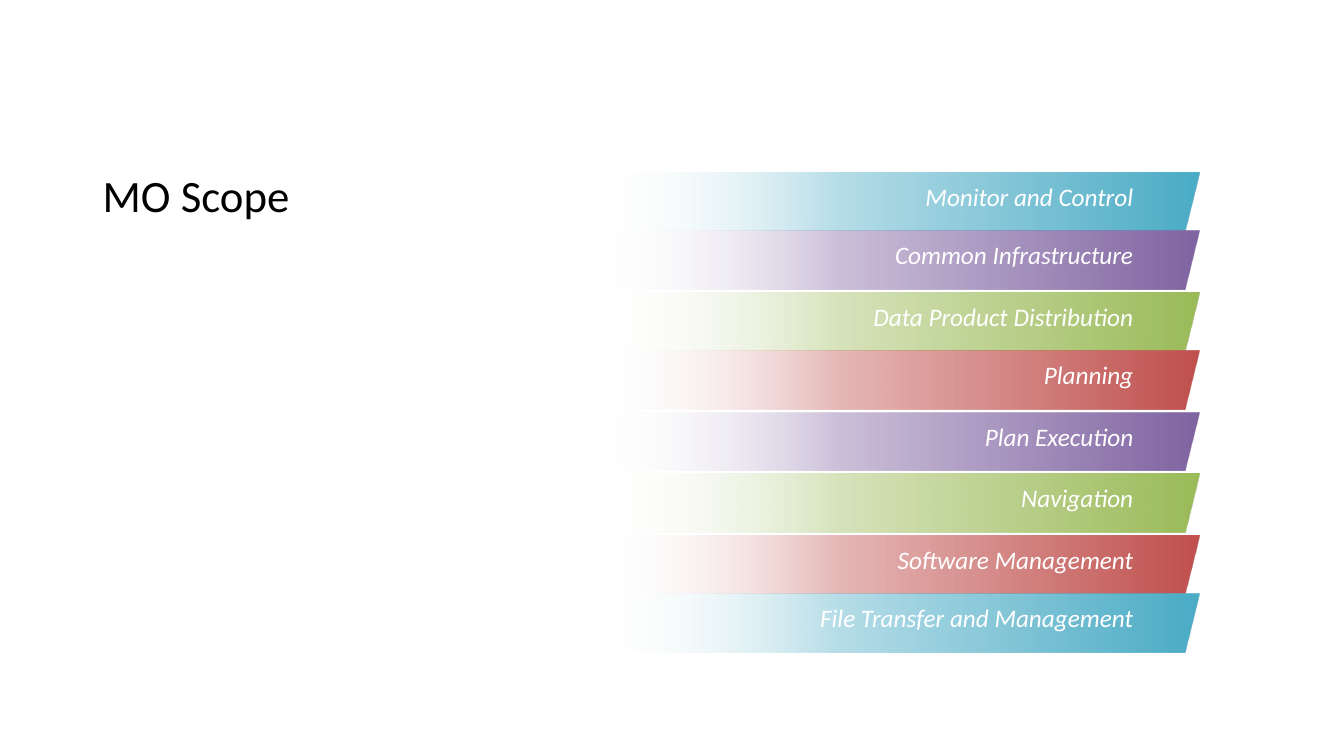
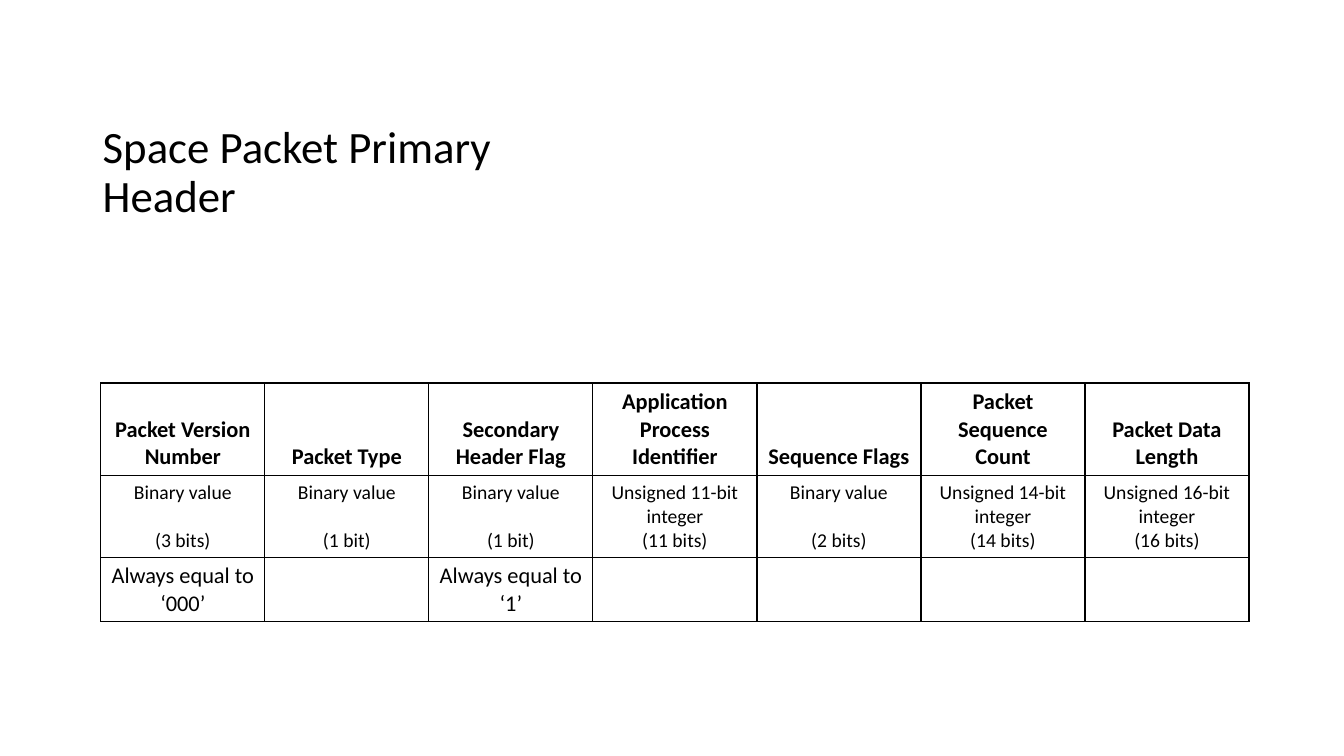
from pptx import Presentation
from pptx.dml.color import RGBColor
from pptx.enum.shapes import MSO_SHAPE
from pptx.enum.text import MSO_ANCHOR, PP_ALIGN
from pptx.oxml import parse_xml
from pptx.oxml.ns import nsdecls, qn
from pptx.util import Inches, Pt

PARALLELOGRAM = MSO_SHAPE.PARALLELOGRAM
TOP, MIDDLE, BOTTOM = MSO_ANCHOR.TOP, MSO_ANCHOR.MIDDLE, MSO_ANCHOR.BOTTOM
CENTER, RIGHT = PP_ALIGN.CENTER, PP_ALIGN.RIGHT

FONT = "Calibri"
BLACK = RGBColor(0x00, 0x00, 0x00)
WHITE = RGBColor(0xFF, 0xFF, 0xFF)
TEAL = RGBColor(0x4B, 0xAC, 0xC6)
PURPLE = RGBColor(0x80, 0x64, 0xA2)
GREEN = RGBColor(0x9B, 0xBB, 0x59)
RED = RGBColor(0xC0, 0x50, 0x4D)

# Content: each scope band has its colour and the gap above it
SCOPE_TITLE = "MO Scope"
SCOPE_BANDS = [
    ("Monitor and Control", TEAL, 0),
    ("Common Infrastructure", PURPLE, 0),
    ("Data Product Distribution", GREEN, 0.03),
    ("Planning", RED, 0),
    ("Plan Execution", PURPLE, 0.03),
    ("Navigation", GREEN, 0.03),
    ("Software Management", RED, 0.03),
    ("File Transfer and Management", TEAL, 0),
]
HEADER_TITLE = "Space Packet Primary Header"
# Field name, value type, size, fixed value
PACKET_FIELDS = [
    ("Packet Version Number", "Binary value", "(3 bits)", "Always equal to ‘000’"),
    ("Packet Type", "Binary value", "(1 bit)", ""),
    ("Secondary Header Flag", "Binary value", "(1 bit)", "Always equal to ‘1’"),
    ("Application Process Identifier", "Unsigned 11-bit integer", "(11 bits)", ""),
    ("Sequence Flags", "Binary value", "(2 bits)", ""),
    ("Packet Sequence Count", "Unsigned 14-bit integer", "(14 bits)", ""),
    ("Packet Data Length", "Unsigned 16-bit integer", "(16 bits)", ""),
]

# Layout, in inches
BAND_LEFT, BAND_TOP, BAND_W, BAND_H = 5.9, 1.71, 6, 0.58
TABLE_LEFT, TABLE_TOP, TABLE_W = 1, 3.8, 11.39
ROW_HEIGHTS = (0.92, 0.81, 0.64)
SKIPPED_LINE = Pt(17)  # one line of 14 pt text


def style(p, size, color=BLACK, bold=False, italic=False, align=None):
    p.alignment = align
    f = p.font
    f.name, f.size, f.bold, f.italic = FONT, Pt(size), bold, italic
    f.color.rgb = color


def add_slide(prs, title):
    s = prs.slides.add_slide(prs.slide_layouts[6])
    tf = s.shapes.add_textbox(
        Inches(0.92), Inches(0.5), Inches(4.3), Inches(1.75)).text_frame
    tf.word_wrap = True
    tf.vertical_anchor = BOTTOM
    p = tf.paragraphs[0]
    p.text = title
    p.line_spacing = 0.9
    style(p, 32)
    return s


def fade_in(sp, color):
    """Fill from clear white at the left to solid colour at the right."""
    sp.fill.gradient()
    sp.fill.gradient_angle = 0
    stops = "".join(
        f'<a:gs pos="{pos * 1000}"><a:srgbClr val="{c}">'
        f'<a:alpha val="{alpha * 1000}"/></a:srgbClr></a:gs>'
        for pos, c, alpha in [(0, WHITE, 0), (40, color, 40), (100, color, 100)])
    grad = sp._element.spPr.find(qn("a:gradFill"))
    grad.replace(grad.find(qn("a:gsLst")),
                 parse_xml(f'<a:gsLst {nsdecls("a")}>{stops}</a:gsLst>'))


def add_band(s, text, color, top):
    sp = s.shapes.add_shape(PARALLELOGRAM, Inches(BAND_LEFT), Inches(top),
                            Inches(BAND_W), Inches(BAND_H))
    sp.adjustments[0] = 0.25
    sp.shadow.inherit = False
    sp.line.fill.background()
    fade_in(sp, color)
    tf = sp.text_frame
    tf.word_wrap = True
    tf.vertical_anchor = MIDDLE
    p = tf.paragraphs[0]
    p.text = text
    p.line_spacing = Pt(14)
    style(p, 18, WHITE, italic=True, align=RIGHT)


def add_borders(cell):
    tc_pr = cell._tc.get_or_add_tcPr()
    for i, side in enumerate(("lnL", "lnR", "lnT", "lnB")):
        tc_pr.insert(i, parse_xml(
            f'<a:{side} {nsdecls("a")} w="{Pt(1)}"><a:solidFill>'
            f'<a:srgbClr val="{BLACK}"/></a:solidFill></a:{side}>'))


def fill_cell(cell, lines, size, bold=False, anchor=TOP):
    cell.fill.background()
    add_borders(cell)
    cell.vertical_anchor = anchor
    cell.text = "\n".join(lines)
    for p in cell.text_frame.paragraphs:
        style(p, size, bold=bold, align=CENTER)


def add_field_table(s):
    table = s.shapes.add_table(
        len(ROW_HEIGHTS), len(PACKET_FIELDS), Inches(TABLE_LEFT),
        Inches(TABLE_TOP), Inches(TABLE_W), Inches(sum(ROW_HEIGHTS))).table
    table.first_row = table.horz_banding = False
    for row, height in zip(table.rows, ROW_HEIGHTS):
        row.height = Inches(height)
    for col, (name, kind, bits, fixed) in enumerate(PACKET_FIELDS):
        fill_cell(table.cell(0, col), [name], 16, bold=True, anchor=BOTTOM)
        fill_cell(table.cell(1, col), [kind, bits], 14)
        fill_cell(table.cell(2, col), [fixed], 16)
        # One-line types leave a line free so that the sizes align
        if kind == "Binary value":
            table.cell(1, col).text_frame.paragraphs[1].space_before = SKIPPED_LINE


def main():
    prs = Presentation()
    prs.slide_width, prs.slide_height = Inches(13.33), Inches(7.5)

    # Scope bands
    s = add_slide(prs, SCOPE_TITLE)
    top = BAND_TOP
    for text, color, gap in SCOPE_BANDS:
        top += gap
        add_band(s, text, color, top)
        top += BAND_H

    # Packet header fields
    add_field_table(add_slide(prs, HEADER_TITLE))

    prs.save("out.pptx")


if __name__ == "__main__":
    main()
